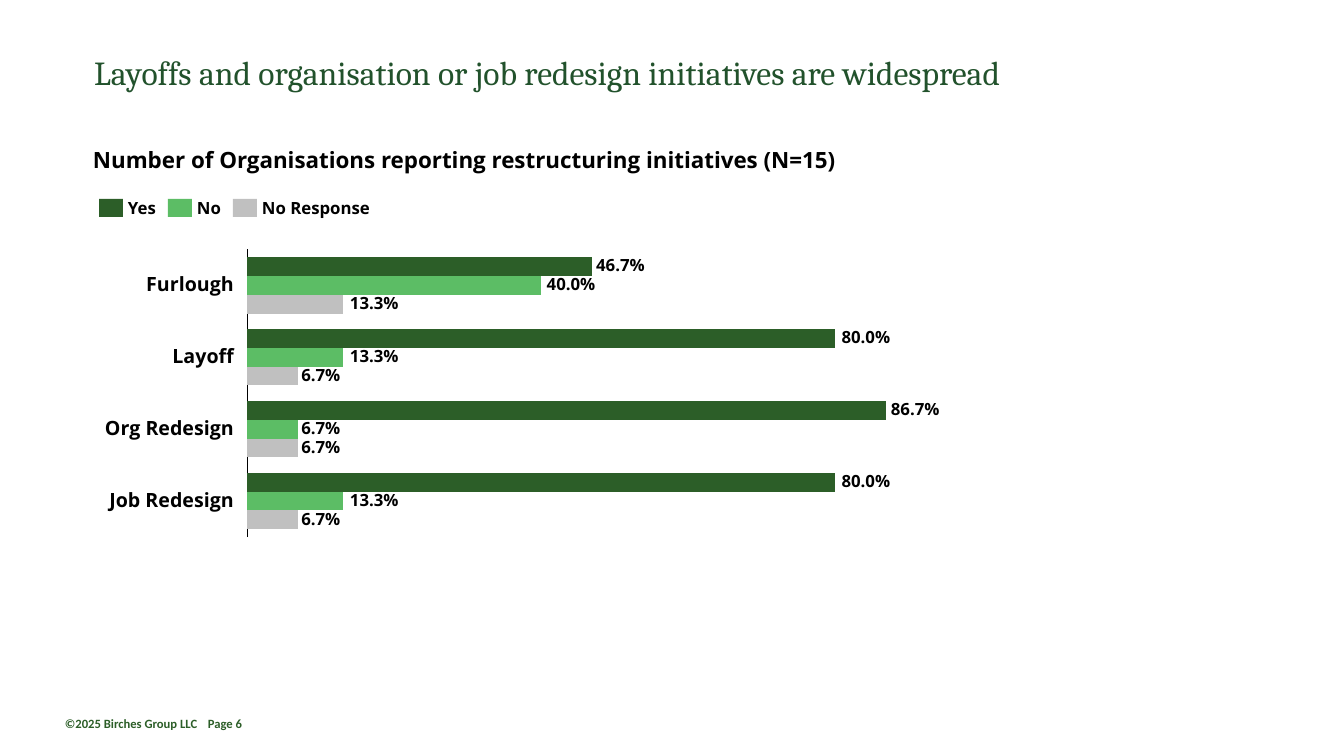
from lxml import etree
from pptx import Presentation
from pptx.chart.data import CategoryChartData
from pptx.dml.color import RGBColor
from pptx.enum.chart import XL_CHART_TYPE, XL_TICK_LABEL_POSITION, XL_TICK_MARK
from pptx.enum.shapes import MSO_SHAPE
from pptx.enum.text import MSO_ANCHOR, PP_ALIGN
from pptx.oxml import parse_xml
from pptx.oxml.ns import nsdecls, qn
from pptx.util import Pt

BAR = XL_CHART_TYPE.BAR_CLUSTERED
BARE = XL_TICK_LABEL_POSITION.NONE
NOTICK = XL_TICK_MARK.NONE
RECT = MSO_SHAPE.RECTANGLE
TOP, MIDDLE = MSO_ANCHOR.TOP, MSO_ANCHOR.MIDDLE
LEFT, RIGHT = PP_ALIGN.LEFT, PP_ALIGN.RIGHT

THEME = {
    "ink": RGBColor.from_string("000000"),
    "title": RGBColor.from_string("22522C"),
    "dark": RGBColor.from_string("2C5E28"),
    "light": RGBColor.from_string("5CBD65"),
    "grey": RGBColor.from_string("C0C0C0"),
    "serif": "Cambria", "sans": "Open Sans", "plain": "Calibri",
    "head": 24, "sub": 16, "group": 14, "label": 12, "chart": 10, "foot": 9,
}


def px(count):
    return round(count * 914400 / 100.8)


def write(text, left, top, width, height, size, face="sans", color="ink",
          bold=True, align=LEFT, anchor=MIDDLE, inset=(0, 0), wrap=False,
          space=0.9, tab=0):
    box = slide.shapes.add_textbox(px(left), px(top), px(width), px(height))
    frame = box.text_frame
    frame.word_wrap = wrap
    frame.vertical_anchor = anchor
    frame.margin_left = frame.margin_right = px(inset[0])
    frame.margin_top = frame.margin_bottom = px(inset[1])
    para = frame.paragraphs[0]
    para.text = text
    if tab:
        stops = etree.SubElement(para._p.get_or_add_pPr(), qn("a:tabLst"))
        etree.SubElement(stops, qn("a:tab"), pos=str(px(tab)), algn="l")
    para.alignment = align
    para.line_spacing = space
    para.font.size = Pt(THEME[size])
    para.font.name = THEME[face]
    para.font.bold = bold
    para.font.color.rgb = THEME[color]


deck = Presentation()
deck.slide_width, deck.slide_height = px(1344), px(756)
slide = deck.slides.add_slide(deck.slide_layouts[6])

write("©2025 Birches Group LLC\tPage 6", 55, 711, 304, 25, "foot", "plain",
      "dark", anchor=TOP, inset=(10, 5), wrap=True, space=1.0, tab=143)
write("Layoffs and organisation or job redesign initiatives are widespread",
      84, 41, 1159, 68, "head", "serif", "title", bold=False,
      inset=(10, 5), wrap=True)

groups = ["Furlough", "Layoff", "Org Redesign", "Job Redesign"]
answers = [
    ("Yes", "dark", [54, 92, 100, 92], [46.7, 80.0, 86.7, 80.0], 99, 36),
    ("No", "light", [46, 15, 8, 15], [40.0, 13.3, 6.7, 13.3], 168, 34),
    ("No Response", "grey", [15, 8, 8, 8], [13.3, 6.7, 6.7, 6.7], 233, 130),
]

data = CategoryChartData()
data.categories = groups
for name, tint, values, shares, left, width in answers:
    data.add_series(name, values)
chart = slide.shapes.add_chart(
    BAR, px(238), px(240), px(657), px(306), data).chart
chart.has_legend = False
chart.has_title = False
chart.font.name = THEME["plain"]
chart.font.size = Pt(THEME["chart"])
chart.font.color.rgb = THEME["ink"]

plot = chart.plots[0]
plot.gap_width = 80
plot.overlap = 0
plot.vary_by_categories = False
for series, answer in zip(plot.series, answers):
    series.invert_if_negative = False
    series.format.fill.solid()
    series.format.fill.fore_color.rgb = THEME[answer[1]]

axis = chart.category_axis
axis.reverse_order = True
axis.tick_label_position = BARE
axis.major_tick_mark = axis.minor_tick_mark = NOTICK
axis.has_major_gridlines = False
axis.format.line.color.rgb = THEME["ink"]
axis.format.line.width = Pt(0.75)
scale = chart.value_axis
scale.minimum_scale, scale.maximum_scale = 0, 100
scale.has_major_gridlines = False
scale.visible = False

area = chart._chartSpace.chart.plotArea
for old in area.findall(qn("c:layout")):
    area.remove(old)
area.insert(0, parse_xml(
    f'<c:layout {nsdecls("c")}><c:manualLayout>'
    '<c:layoutTarget val="inner"/><c:xMode val="edge"/><c:yMode val="edge"/>'
    '<c:x val="0.014"/><c:y val="0.03"/><c:w val="0.972"/><c:h val="0.941"/>'
    '</c:manualLayout></c:layout>'))

for row, group in enumerate(groups):
    write(group, 94, 275 + 72 * row, 140, 21, "group", align=RIGHT)
    for step, answer in enumerate(answers):
        share = answer[3][row]
        write(f"{share:.1f}%", 250 + share * 639 / 86.7,
              257 + 72 * row + 19 * step, 60, 18, "label", inset=(2, 0))

for name, tint, values, shares, left, width in answers:
    key = slide.shapes.add_shape(RECT, px(left), px(199), px(24), px(18))
    key.shadow.inherit = False
    key.fill.solid()
    key.fill.fore_color.rgb = THEME[tint]
    key.line.fill.background()
    write(name, left + 29, 200, width, 18, "label")

write("Number of Organisations reporting restructuring initiatives (N=15)",
      93, 149, 1159, 21, "sub", anchor=TOP)

deck.save("out.pptx")
